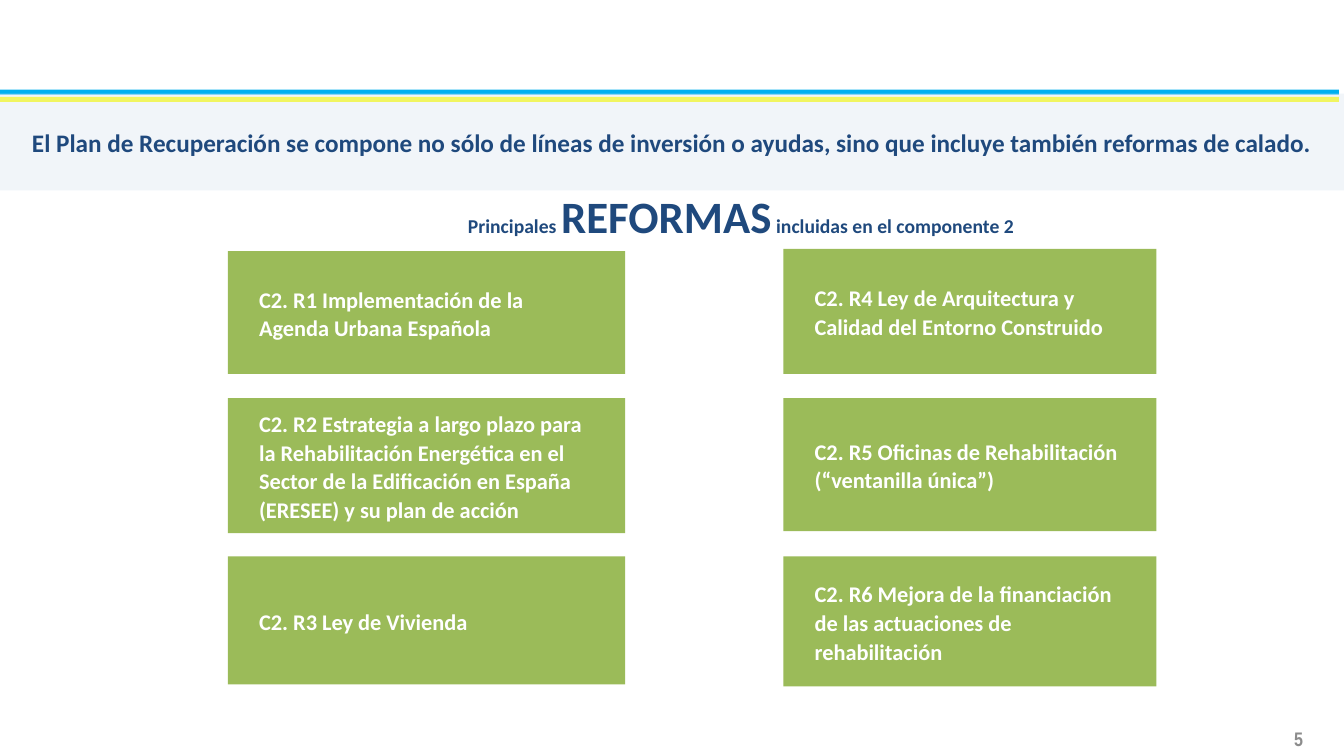
from lxml.etree import SubElement
from pptx import Presentation
from pptx.dml.color import RGBColor
from pptx.enum.shapes import MSO_SHAPE
from pptx.enum.text import MSO_ANCHOR, PP_ALIGN
from pptx.oxml.ns import qn
from pptx.util import Inches, Pt

NAVY, GREEN, WHITE, GREY = "1F497D", "9BBB59", "FFFFFF", "8C8C8C"
STRIPES = [(0.89, "00B0F0"), (0.96, "FFFF00")]
MESSAGE = ("El Plan de Recuperación se compone no sólo de líneas de inversión o ayudas, "
           "sino que incluye también reformas de calado.")
HEADING = [("Principales ", 14), ("REFORMAS", 32), (" incluidas en el componente 2", 14)]
PAGE_NUMBER = "5"
ROW_TOPS = [2.49, 3.95, 5.52]
REFORM_COLUMNS = [
    (2.26, 3.94, [
        ("C2. R1 Implementación de la Agenda Urbana Española", 0, 1.22),
        ("C2. R2 Estrategia a largo plazo para la Rehabilitación Energética en el Sector "
         "de la Edificación en España (ERESEE) y su plan de acción", 0, 1.34),
        ("C2. R3 Ley de Vivienda", 0, 1.27),
    ]),
    (7.77, 3.7, [
        ("C2. R4 Ley de Arquitectura y Calidad del Entorno Construido", -0.02, 1.24),
        ("C2. R5 Oficinas de Rehabilitación (“ventanilla única”)", 0, 1.32),
        ("C2. R6 Mejora de la financiación de las actuaciones de rehabilitación", 0, 1.29),
    ]),
]


def set_color(color_format, value):
    color_format.rgb = RGBColor.from_string(value)


def add_rectangle(slide, box, color, opacity=100):
    shape = slide.shapes.add_shape(MSO_SHAPE.RECTANGLE, *map(Inches, box))
    shape.shadow.inherit = False
    shape.line.fill.background()
    shape.fill.solid()
    set_color(shape.fill.fore_color, color)
    if opacity < 100:
        color_element = shape.fill._xPr.find(qn("a:solidFill"))[0]
        SubElement(color_element, qn("a:alpha"), val=str(opacity * 1000))
    return shape


def write(shape, runs, color, align=PP_ALIGN.LEFT, anchor=MSO_ANCHOR.MIDDLE,
          font="Calibri", side_margin=0.1, line_spacing=None):
    frame = shape.text_frame
    frame.word_wrap = True
    frame.vertical_anchor = anchor
    frame.margin_left = frame.margin_right = Inches(side_margin)
    paragraph = frame.paragraphs[0]
    paragraph.alignment = align
    paragraph.line_spacing = line_spacing
    for text, size in runs:
        run = paragraph.add_run()
        run.text = text
        run.font.name = font
        run.font.size = Pt(size)
        run.font.bold = True
        set_color(run.font.color, color)
    return paragraph


def main():
    presentation = Presentation()
    presentation.slide_width = Inches(13.33)
    presentation.slide_height = Inches(7.5)
    slide = presentation.slides.add_slide(presentation.slide_layouts[6])

    for top, color in STRIPES:
        add_rectangle(slide, (0, top, 13.28, 0.05), color)

    banner = add_rectangle(slide, (0, 0.93, 13.33, 0.96), "DCE6F2", opacity=40)
    write(banner, [(MESSAGE, 18)], NAVY, PP_ALIGN.CENTER, side_margin=0.31)

    heading = slide.shapes.add_textbox(*map(Inches, (2.73, 1.79, 9.24, 0.68)))
    paragraph = write(heading, HEADING, NAVY, PP_ALIGN.CENTER, MSO_ANCHOR.TOP,
                      line_spacing=1.07)
    paragraph.space_after = Pt(8)

    number = slide.shapes.add_textbox(*map(Inches, (12.48, 7.13, 0.8, 0.4)))
    write(number, [(PAGE_NUMBER, 14)], GREY, PP_ALIGN.CENTER, font="Arial Narrow")

    for left, width, reforms in REFORM_COLUMNS:
        for row_top, (text, shift, height) in zip(ROW_TOPS, reforms):
            card = add_rectangle(slide, (left, row_top + shift, width, height), GREEN)
            write(card, [(text, 16)], WHITE, side_margin=0.31, line_spacing=1.07)

    presentation.save("out.pptx")


if __name__ == "__main__":
    main()
